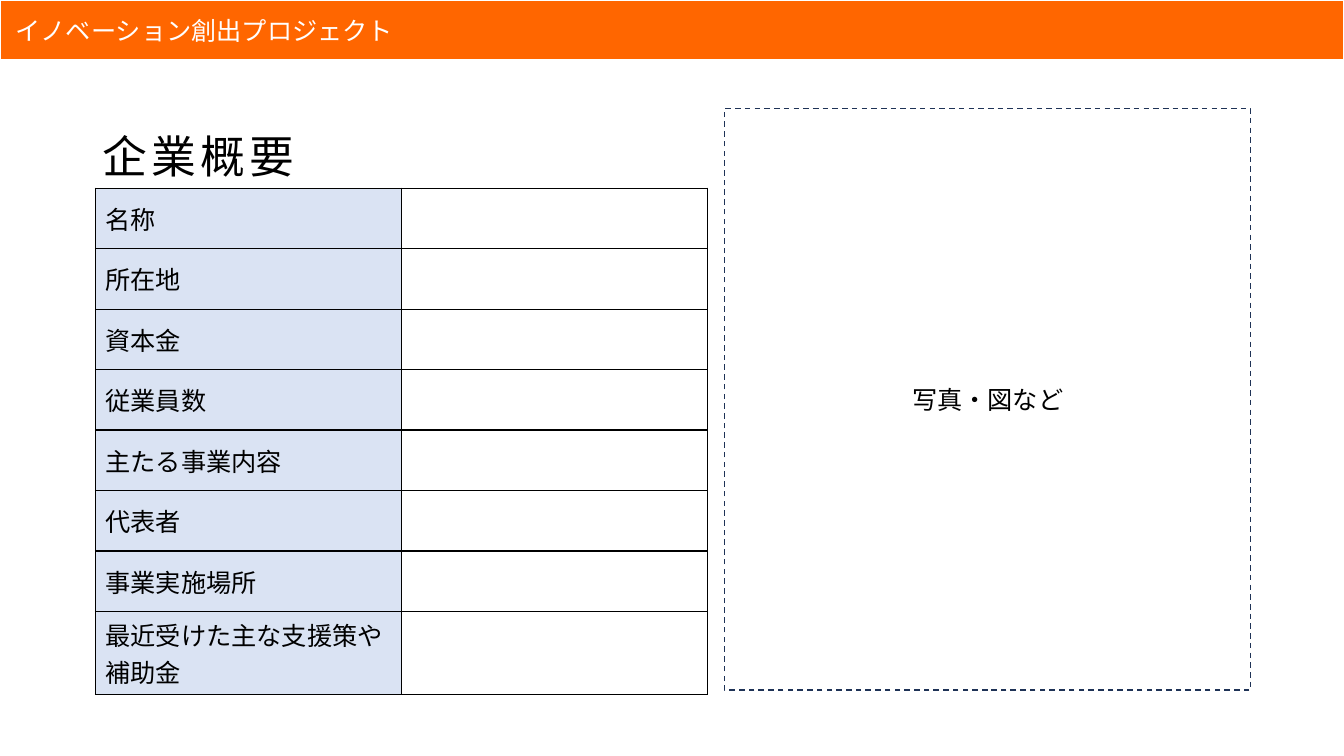
from lxml.etree import SubElement
from pptx import Presentation
from pptx.dml.color import RGBColor
from pptx.enum.dml import MSO_LINE
from pptx.enum.shapes import MSO_SHAPE
from pptx.enum.text import MSO_ANCHOR, MSO_AUTO_SIZE, PP_ALIGN
from pptx.oxml.ns import qn
from pptx.util import Pt

HEADER = " イノベーション創出プロジェクト"
TITLE = "企業概要"
PHOTO_LABEL = "写真・図など"
COMPANY_ITEMS = [
    "名称", "所在地", "資本金", "従業員数", "主たる事業内容",
    "代表者", "事業実施場所", "最近受けた主な支援策や補助金",
]

FONT = "Noto Sans CJK JP"
ORANGE = RGBColor(0xFF, 0x66, 0x00)
PALE_BLUE = RGBColor(0xDA, 0xE3, 0xF3)
NAVY = RGBColor(0x1E, 0x32, 0x56)
WHITE = RGBColor(0xFF, 0xFF, 0xFF)
BLACK = RGBColor(0x00, 0x00, 0x00)

SLIDE_WIDTH, SLIDE_HEIGHT = 960, 540
HEADER_HEIGHT = 43
CONTENT_TOP = 77.5
TABLE_LEFT, TABLE_TOP = 68.2, 134.4
COLUMN_WIDTH = 218.7
ROW_HEIGHT, LAST_ROW_HEIGHT = 43.2, 56.5
PHOTO_LEFT, PHOTO_WIDTH, PHOTO_HEIGHT = 517.5, 376, 415.5


def add_text(paragraph, text, size=18, color=BLACK):
    run = paragraph.add_run()
    run.text = text
    run.font.size = Pt(size)
    run.font.color.rgb = color
    run.font.name = FONT
    properties = run.font._element
    SubElement(properties, qn("a:ea"), typeface=FONT)
    return properties


def add_box(slide, left, top, width, height, fill, line, line_width):
    box = slide.shapes.add_shape(
        MSO_SHAPE.RECTANGLE, Pt(left), Pt(top), Pt(width), Pt(height))
    box.shadow.inherit = False
    box.fill.solid()
    box.fill.fore_color.rgb = fill
    box.line.color.rgb = line
    box.line.width = Pt(line_width)
    box.text_frame.vertical_anchor = MSO_ANCHOR.MIDDLE
    return box


def add_borders(cell):
    """Draw black one-point lines on all four sides, ahead of the cell's fill."""
    properties = cell._tc.get_or_add_tcPr()
    for position, side in enumerate(("lnL", "lnR", "lnT", "lnB")):
        line = SubElement(properties, qn(f"a:{side}"), w=str(Pt(1)))
        fill = SubElement(line, qn("a:solidFill"))
        SubElement(fill, qn("a:srgbClr"), val=str(BLACK))
        properties.insert(position, line)


def add_header(slide):
    header = add_box(slide, 0, 0, SLIDE_WIDTH, HEADER_HEIGHT, ORANGE, WHITE, 1.5)
    paragraph = header.text_frame.paragraphs[0]
    paragraph.alignment = PP_ALIGN.LEFT
    add_text(paragraph, HEADER, color=WHITE)


def set_title(slide):
    title = slide.shapes.title
    title.left, title.top = Pt(66), Pt(CONTENT_TOP)
    title.width, title.height = Pt(310), Pt(57)
    frame = title.text_frame
    frame.word_wrap = True
    frame.auto_size = MSO_AUTO_SIZE.NONE
    frame.vertical_anchor = MSO_ANCHOR.BOTTOM
    paragraph = frame.paragraphs[0]
    paragraph.alignment = PP_ALIGN.LEFT
    paragraph.line_spacing = 0.9
    add_text(paragraph, TITLE, size=32).set("spc", "300")


def add_company_table(slide):
    heights = [ROW_HEIGHT] * (len(COMPANY_ITEMS) - 1) + [LAST_ROW_HEIGHT]
    table = slide.shapes.add_table(
        len(heights), 2, Pt(TABLE_LEFT), Pt(TABLE_TOP),
        Pt(2 * COLUMN_WIDTH), Pt(sum(heights))).table
    table.first_row = table.horz_banding = False
    for column in table.columns:
        column.width = Pt(COLUMN_WIDTH)
    for row, height, item in zip(table.rows, heights, COMPANY_ITEMS):
        row.height = Pt(height)
        label, value = row.cells
        label.fill.solid()
        label.fill.fore_color.rgb = PALE_BLUE
        value.fill.background()
        add_text(label.text_frame.paragraphs[0], item)
        for cell in (label, value):
            cell.vertical_anchor = MSO_ANCHOR.MIDDLE
            add_borders(cell)


def add_photo_frame(slide):
    photo = add_box(slide, PHOTO_LEFT, CONTENT_TOP, PHOTO_WIDTH, PHOTO_HEIGHT,
                    WHITE, NAVY, 1)
    photo.line.dash_style = MSO_LINE.DASH
    paragraph = photo.text_frame.paragraphs[0]
    paragraph.alignment = PP_ALIGN.CENTER
    add_text(paragraph, PHOTO_LABEL)


def main():
    presentation = Presentation()
    presentation.slide_width = Pt(SLIDE_WIDTH)
    presentation.slide_height = Pt(SLIDE_HEIGHT)
    slide = presentation.slides.add_slide(presentation.slide_layouts[5])
    add_header(slide)
    set_title(slide)
    add_company_table(slide)
    add_photo_frame(slide)
    presentation.save("out.pptx")


if __name__ == "__main__":
    main()
